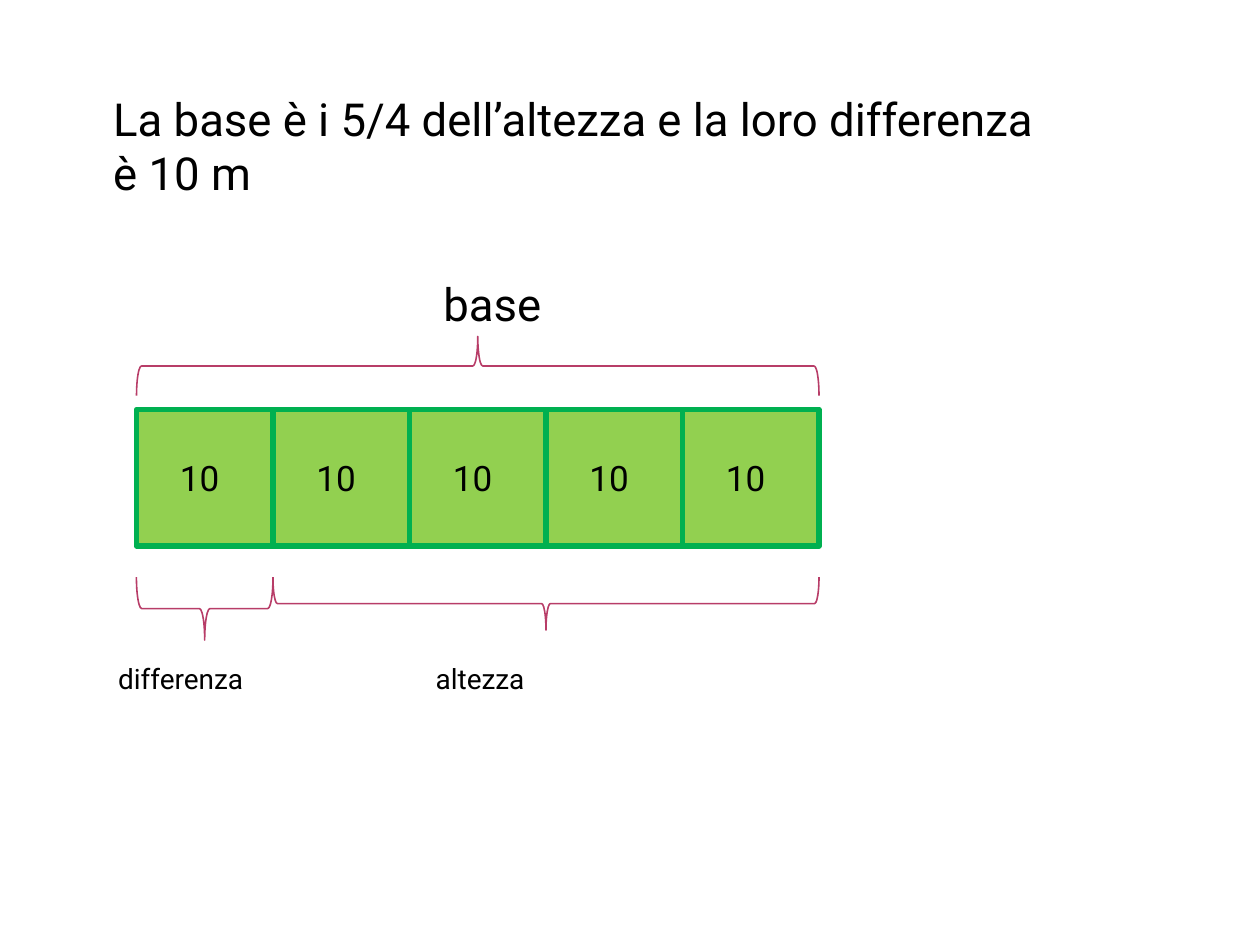
import pptx
import pptx.util
import pptx.dml.color
import pptx.enum.shapes
import pptx.enum.text

Inches = pptx.util.Inches
SHAPE = pptx.enum.shapes.MSO_SHAPE
SIDE = 6.5 / 6  # six and a half inches hold the left margin and five squares
LEFT = SIDE
TOP = 3.25
COUNT = 5


def color(code):
    return pptx.dml.color.RGBColor.from_string(code)


def write(frame, text, size):
    para = frame.paragraphs[0]
    para.text = text
    para.font.name = "Roboto"
    para.font.size = pptx.util.Pt(size)
    para.font.color.rgb = color("000000")
    return para


def label(slide, text, size, left, top, width, height):
    box = slide.shapes.add_textbox(
        Inches(left), Inches(top), Inches(width), Inches(height))
    box.text_frame.word_wrap = True
    write(box.text_frame, text, size)


def square(slide, left, text):
    shape = slide.shapes.add_shape(
        SHAPE.RECTANGLE, Inches(left), Inches(TOP), Inches(SIDE), Inches(SIDE))
    shape.shadow.inherit = False
    shape.fill.solid()
    shape.fill.fore_color.rgb = color("92D050")
    shape.line.color.rgb = color("00B050")
    shape.line.width = pptx.util.Pt(3.15)
    frame = shape.text_frame
    frame.margin_left = 0
    frame.margin_right = Inches(0.08)
    frame.vertical_anchor = pptx.enum.text.MSO_ANCHOR.MIDDLE
    write(frame, text, 20).alignment = pptx.enum.text.PP_ALIGN.CENTER


def brace(slide, left, top, span, depth, turn):
    """Lay a brace flat over the given span; left and top are as seen."""
    shift = (span - depth) / 2
    shape = slide.shapes.add_shape(
        SHAPE.LEFT_BRACE, Inches(left + shift), Inches(top - shift),
        Inches(depth), Inches(span))
    shape.rotation = turn
    shape.shadow.inherit = False
    shape.fill.background()
    shape.line.color.rgb = color("B83D68")
    shape.line.width = pptx.util.Pt(0.9)


def main():
    deck = pptx.Presentation()
    deck.slide_width = Inches(10)
    deck.slide_height = Inches(7.5)
    slide = deck.slides.add_slide(deck.slide_layouts[6])

    label(slide, "La base è i 5/4 dell’altezza e la loro differenza è 10 m",
          26, 0.8, 0.67, 7.62, 1)
    label(slide, "base", 26, 3.42, 2.14, 1.2, 0.5)
    label(slide, "differenza", 16, 0.84, 5.2, 1.4, 0.37)
    label(slide, "altezza", 16, 3.36, 5.2, 1.2, 0.37)

    for i in range(COUNT):
        square(slide, LEFT + i * SIDE, "10")

    brace(slide, LEFT, 2.67, COUNT * SIDE, 0.47, 90)
    brace(slide, LEFT, 4.58, SIDE, 0.5, 270)
    brace(slide, LEFT + SIDE, 4.58, (COUNT - 1) * SIDE, 0.42, 270)

    deck.save("out.pptx")


if __name__ == "__main__":
    main()
